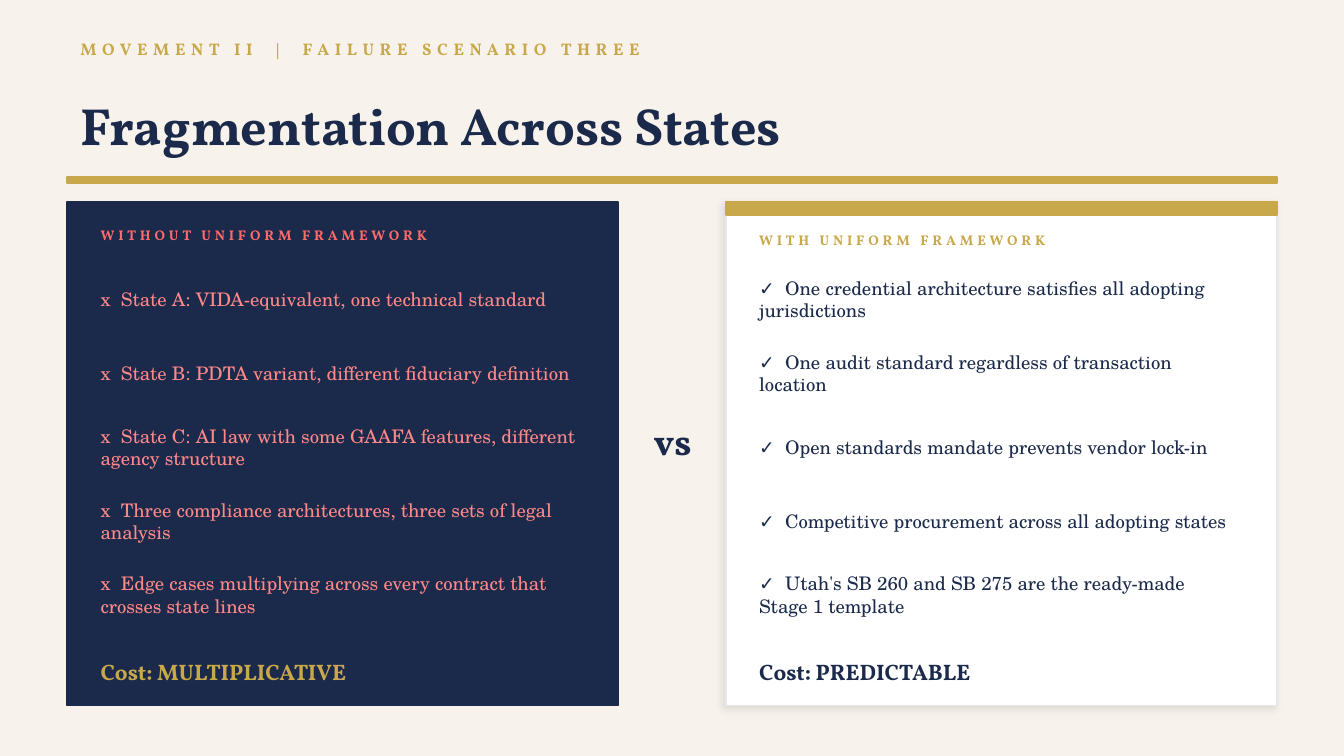
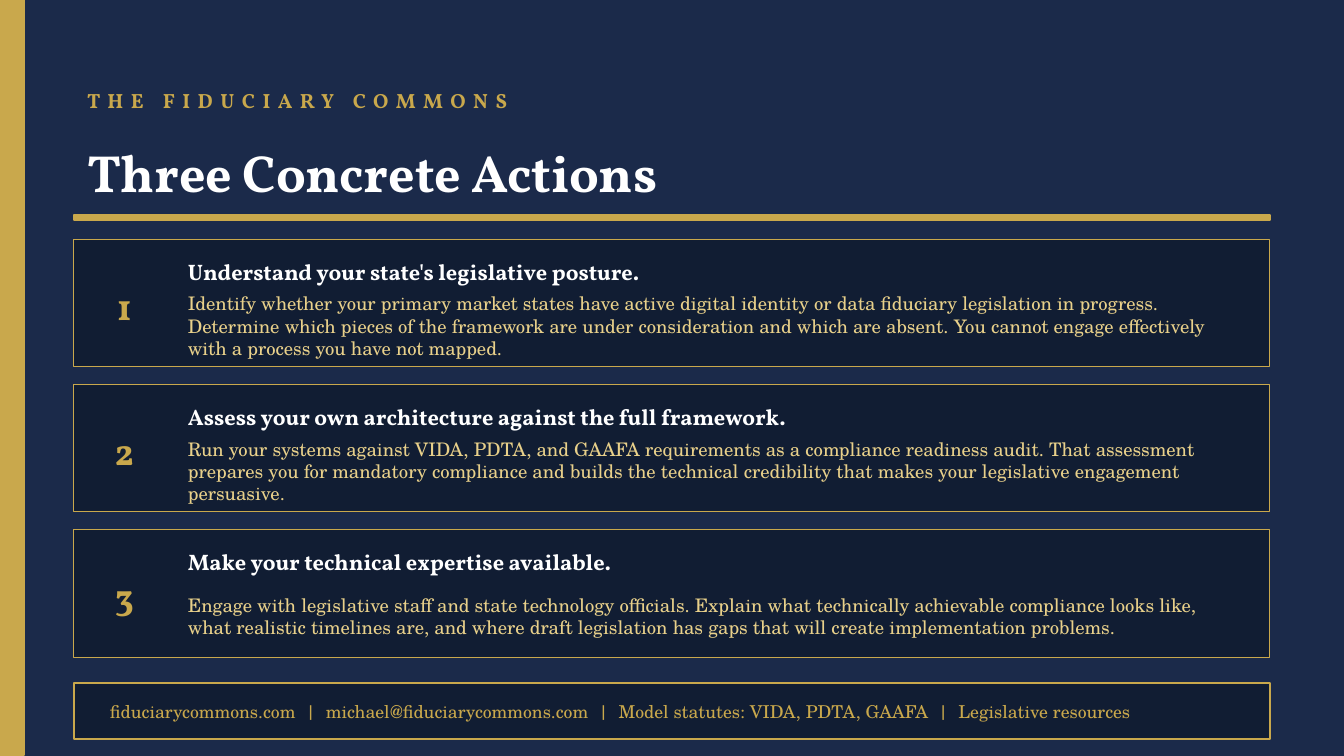
from lxml.etree import SubElement
from pptx import Presentation
from pptx.dml.color import RGBColor
from pptx.enum.shapes import MSO_SHAPE as Shape
from pptx.enum.text import MSO_ANCHOR as Anchor, PP_ALIGN as Align
from pptx.oxml.ns import qn
from pptx.util import Inches, Pt

HEAD, BODY = "Vollkorn", "TeX Gyre Schola"
HEX = {
    "cream": "F7F3EC", "navy": "1B2A4A", "deep": "111D33", "gold": "C9A84C",
    "sand": "E8D08A", "white": "FFFFFF", "gray": "E5E7EB", "black": "000000",
    "red": "FF6B6B", "pink": "FF8888",
}
SEP = "  |  "

RISKS = [
    "State A: VIDA-equivalent, one technical standard",
    "State B: PDTA variant, different fiduciary definition",
    "State C: AI law with some GAAFA features, different agency structure",
    "Three compliance architectures, three sets of legal analysis",
    "Edge cases multiplying across every contract that crosses state lines",
]
GAINS = [
    "One credential architecture satisfies all adopting jurisdictions",
    "One audit standard regardless of transaction location",
    "Open standards mandate prevents vendor lock-in",
    "Competitive procurement across all adopting states",
    "Utah's SB 260 and SB 275 are the ready-made Stage 1 template",
]
ACTIONS = [
    ("Understand your state's legislative posture.",
     "Identify whether your primary market states have active digital identity "
     "or data fiduciary legislation in progress. Determine which pieces of the "
     "framework are under consideration and which are absent. You cannot engage "
     "effectively with a process you have not mapped."),
    ("Assess your own architecture against the full framework.",
     "Run your systems against VIDA, PDTA, and GAAFA requirements as a compliance "
     "readiness audit. That assessment prepares you for mandatory compliance and "
     "builds the technical credibility that makes your legislative engagement "
     "persuasive."),
    ("Make your technical expertise available.",
     "Engage with legislative staff and state technology officials. Explain what "
     "technically achievable compliance looks like, what realistic timelines are, "
     "and where draft legislation has gaps that will create implementation "
     "problems."),
]
LINKS = ["fiduciarycommons.com", "michael@fiduciarycommons.com",
         "Model statutes: VIDA, PDTA, GAAFA", "Legislative resources"]


def color(name):
    return RGBColor.from_string(HEX[name])


def add_page(deck, back):
    page = deck.slides.add_slide(deck.slide_layouts[6])
    page.background.fill.solid()
    page.background.fill.fore_color.rgb = color(back)
    return page


def add_box(page, x, y, w, h, fill, line=None, width=1):
    """Draw a rectangle; the outline takes the fill colour unless given."""
    box = page.shapes.add_shape(
        Shape.RECTANGLE, Inches(x), Inches(y), Inches(w), Inches(h))
    box.shadow.inherit = False
    box.fill.solid()
    box.fill.fore_color.rgb = color(fill)
    box.line.color.rgb = color(line or fill)
    box.line.width = Pt(width)
    return box


def add_shade(box):
    """Give a box a soft shadow: 4 pt blur, 2 pt away, 10 % black."""
    effects = box._element.spPr.find(qn("a:effectLst"))
    shade = SubElement(effects, qn("a:outerShdw"), blurRad=str(Pt(4)),
                       dist=str(Pt(2)), dir=str(135 * 60000),
                       algn="bl", rotWithShape="0")
    tone = SubElement(shade, qn("a:srgbClr"), val=HEX["black"])
    SubElement(tone, qn("a:alpha"), val="10000")


def add_text(page, x, y, w, h, text, size, tint, font=BODY, align=Align.LEFT,
             track=0):
    """Add one line or block of text; track is letter spacing in points."""
    frame = page.shapes.add_textbox(
        Inches(x), Inches(y), Inches(w), Inches(h)).text_frame
    frame.word_wrap = True
    frame.vertical_anchor = Anchor.MIDDLE
    para = frame.paragraphs[0]
    para.alignment = align
    run = para.add_run()
    run.text = text
    run.font.name = font
    run.font.size = Pt(size)
    run.font.bold = font == HEAD
    run.font.color.rgb = color(tint)
    if track:
        run._r.get_or_add_rPr().set("spc", str(track * 100))


def add_title(page, x, y, h, text, tint, rule, width):
    """Add the slide title with the gold rule below it."""
    add_text(page, x, y, 9, h, text, 28, tint, HEAD)
    add_box(page, x, rule, width, 0.04, "gold")


def add_list(page, x, top, head, mark, items, cost, tints):
    """Fill a column: heading, marked items and the closing cost line."""
    label, item, total = tints
    add_text(page, x, top, 3.8, 0.25, head, 7.5, label, HEAD, track=2)
    for i, text in enumerate(items):
        add_text(page, x, 2 + 0.55 * i, 3.75, 0.45, f"{mark}  {text}", 10, item)
    add_text(page, x, 4.85, 3.75, 0.3, f"Cost: {cost}", 12, total, HEAD)


def add_action(page, y, num, head, text):
    add_box(page, 0.55, y, 8.9, 0.95, "deep", "gold", 0.5)
    add_text(page, 0.7, y + 0.28, 0.45, 0.42, str(num), 20, "gold", HEAD,
             Align.CENTER)
    add_text(page, 1.3, y + 0.1, 8, 0.28, head, 12, "white", HEAD)
    add_text(page, 1.3, y + 0.42, 8, 0.45, text, 10, "sand")


def add_states(deck):
    page = add_page(deck, "cream")
    add_text(page, 0.5, 0.22, 9, 0.28,
             SEP.join(["MOVEMENT II", "FAILURE SCENARIO THREE"]), 9, "gold",
             HEAD, track=3)
    add_title(page, 0.5, 0.55, 0.75, "Fragmentation Across States", "navy",
              1.32, 9)

    add_box(page, 0.5, 1.5, 4.1, 3.75, "navy")
    add_list(page, 0.65, 1.62, "WITHOUT UNIFORM FRAMEWORK", "x", RISKS,
             "MULTIPLICATIVE", ("red", "pink", "gold"))

    add_text(page, 4.68, 3, 0.65, 0.55, "vs", 20, "navy", HEAD, Align.CENTER)

    add_shade(add_box(page, 5.4, 1.5, 4.1, 3.75, "white", "gray"))
    add_box(page, 5.4, 1.5, 4.1, 0.1, "gold")
    add_list(page, 5.55, 1.66, "WITH UNIFORM FRAMEWORK", "✓", GAINS,
             "PREDICTABLE", ("gold", "navy", "navy"))


def add_steps(deck):
    page = add_page(deck, "navy")
    add_box(page, 0, 0, 0.18, 5.62, "gold")
    add_text(page, 0.55, 0.55, 9, 0.4, "THE FIDUCIARY COMMONS", 11, "gold",
             HEAD, track=4)
    add_title(page, 0.55, 1, 0.55, "Three Concrete Actions", "white", 1.6, 8.9)
    for i, (head, text) in enumerate(ACTIONS):
        add_action(page, 1.78 + 1.08 * i, i + 1, head, text)
    add_box(page, 0.55, 5.08, 8.9, 0.42, "deep", "gold")
    add_text(page, 0.72, 5.15, 8.56, 0.28, SEP.join(LINKS), 9.5, "gold")


def main():
    deck = Presentation()
    deck.slide_width = Inches(10)
    deck.slide_height = Inches(10) * 9 // 16
    add_states(deck)
    add_steps(deck)
    deck.save("out.pptx")


if __name__ == "__main__":
    main()
